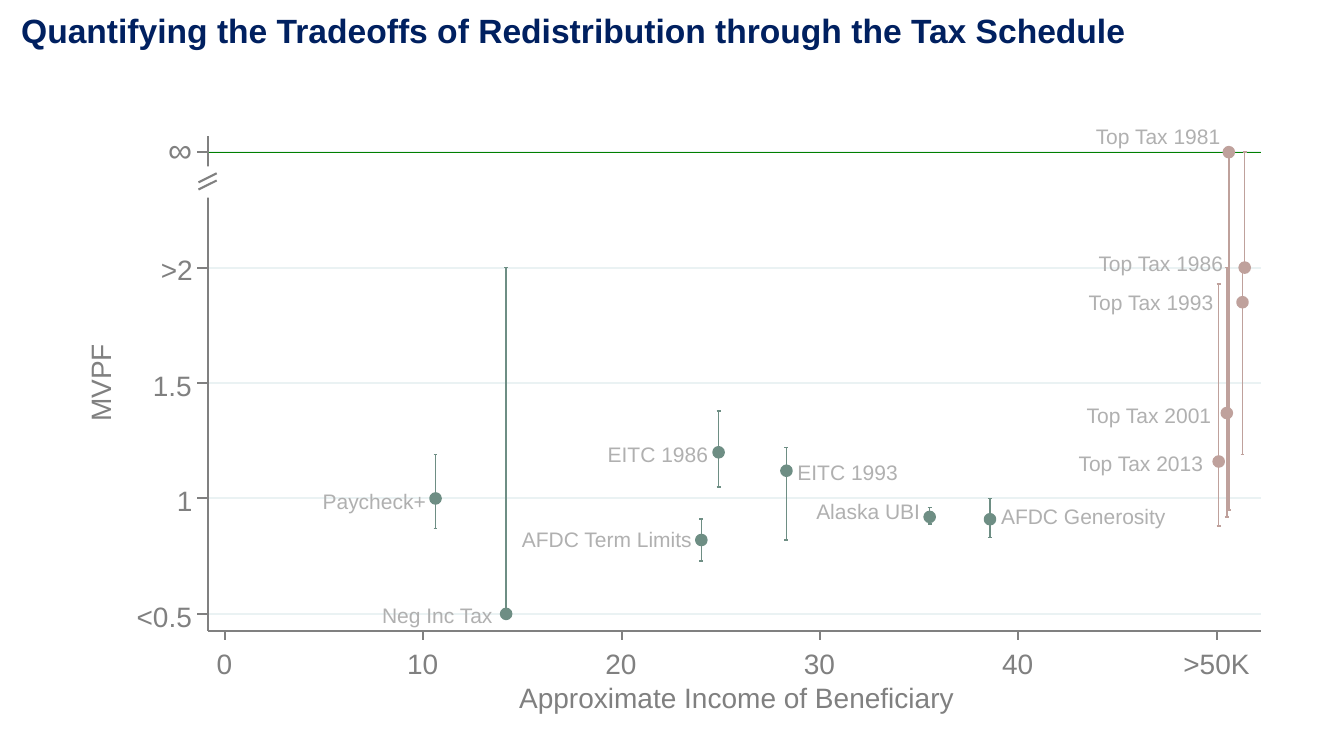
from dataclasses import dataclass
from typing import NamedTuple

from lxml.etree import SubElement
from pptx import Presentation
from pptx.dml.color import RGBColor as RGB
from pptx.enum.shapes import MSO_CONNECTOR as LINK, MSO_SHAPE as SHAPE
from pptx.enum.text import MSO_ANCHOR as ANCHOR, MSO_AUTO_SIZE as FIT, PP_ALIGN as ALIGN
from pptx.oxml.ns import qn
from pptx.util import Pt


@dataclass(frozen=True)
class Theme:
    font: str = "Arial"
    navy: RGB = RGB(0x00, 0x20, 0x60)
    white: RGB = RGB(0xFF, 0xFF, 0xFF)
    grid: RGB = RGB(0xEA, 0xF2, 0xF3)
    infinity: RGB = RGB(0x00, 0x80, 0x00)
    transfer: RGB = RGB(0x6E, 0x8E, 0x84)
    top_tax: RGB = RGB(0xBF, 0xA1, 0x9C)
    axis: RGB = RGB(0x80, 0x80, 0x80)
    policy: RGB = RGB(0xB0, 0xB0, 0xB0)
    title_size: float = 24
    axis_size: float = 20
    policy_size: float = 15


THEME = Theme()


class Box(NamedTuple):
    left: float
    top: float
    width: float
    height: float

    @property
    def right(self):
        return self.left + self.width

    @property
    def bottom(self):
        return self.top + self.height

    def x(self, income):
        return self.left + 12.3 + 14.17 * income

    def y(self, mvpf):
        return self.bottom - 12.2 - 164.9 * (mvpf - 0.5)


class Policy(NamedTuple):
    name: str
    income: float
    mvpf: float
    low: float
    high: float
    label_dx: float
    label_dy: float
    label_width: float
    color: RGB = THEME.transfer


INFINITY = 2.5
TOP_WIDTH = 103
POLICIES = [
    Policy("Paycheck+", 10.62, 1, 0.87, 1.19, -80.6, -6.8, 83.5),
    Policy("Neg Inc Tax", 14.18, 0.5, 0.5, 2, -88.6, -7.9, 91.4),
    Policy("AFDC Term Limits", 24.02, 0.82, 0.73, 0.91, -128.2, -9.7, 137.5),
    Policy("EITC 1986", 24.89, 1.2, 1.05, 1.38, -79.2, -7.6, 81.4),
    Policy("EITC 1993", 28.31, 1.12, 0.82, 1.22, 7.9, -8.3, 81.4),
    Policy("Alaska UBI", 35.53, 0.92, 0.89, 0.96, -81, -13.3, 85),
    Policy("AFDC Generosity", 38.57, 0.91, 0.83, 1, 7.9, -11.2, 130.3),
    Policy("Top Tax 2013", 50.1, 1.16, 0.88, 1.93, -100.1, -7.6, TOP_WIDTH, THEME.top_tax),
    Policy("Top Tax 2001", 50.51, 1.37, 0.92, 2, -100.1, -7.6, TOP_WIDTH, THEME.top_tax),
    Policy("Top Tax 1981", 50.61, INFINITY, 0.95, INFINITY, -95, -20.2, TOP_WIDTH, THEME.top_tax),
    Policy("Top Tax 1993", 51.3, 1.85, 1.19, 2, -109.8, -9, TOP_WIDTH, THEME.top_tax),
    Policy("Top Tax 1986", 51.41, 2, 2, INFINITY, -104.4, -11.9, TOP_WIDTH, THEME.top_tax),
]
MVPF_TICKS = [("<0.5", 49), ("1", 20.2), ("1.5", 37.4), (">2", 31.7), (None, 0)]
INCOME_TICKS = [("0", 20.2), ("10", 31.7), ("20", 31.7), ("30", 31.7), ("40", 31.7), (">50K", 56.2)]


def write(shapes, box, words, *, size=THEME.axis_size, color=THEME.axis,
          bold=False, turn=0, holder=None):
    holder = holder or shapes.add_textbox(0, 0, 0, 0)
    holder.left, holder.top, holder.width, holder.height = map(Pt, box)
    holder.rotation = turn
    frame = holder.text_frame
    frame.margin_left = frame.margin_right = frame.margin_top = frame.margin_bottom = 0
    frame.word_wrap = True
    frame.auto_size = FIT.NONE
    frame.vertical_anchor = ANCHOR.TOP
    paragraph = frame.paragraphs[0]
    paragraph.alignment = ALIGN.LEFT
    run = paragraph.add_run()
    run.text = words
    font = run.font
    font.name, font.size, font.bold = THEME.font, Pt(size), bold
    font.color.rgb = color


def rule(shapes, x1, y1, x2, y2, color=THEME.axis, width=1.5):
    link = shapes.add_connector(LINK.STRAIGHT, Pt(x1), Pt(y1), Pt(x2), Pt(y2))
    link.line.color.rgb = color
    link.line.width = Pt(width)
    SubElement(link._element.spPr, qn("a:effectLst"))


def patch(shapes, kind, box, color, line_width=0):
    shape = shapes.add_shape(kind, *map(Pt, box))
    shape.shadow.inherit = False
    shape.fill.solid()
    shape.fill.fore_color.rgb = color
    if line_width:
        shape.line.color.rgb = color
        shape.line.width = Pt(line_width)
    else:
        shape.line.fill.background()


def draw_grid(shapes, plot):
    patch(shapes, SHAPE.RECTANGLE, plot, THEME.white, 1.13)
    for step in range(len(MVPF_TICKS)):
        level = plot.y(0.5 + step / 2)
        rule(shapes, plot.left, level, plot.right, level, THEME.grid)
    top = plot.y(INFINITY)
    rule(shapes, plot.left, top, plot.right, top, THEME.infinity, 0.75)


def draw_policies(shapes, plot):
    cap, dot = 1.4, 6.5
    for policy in POLICIES:
        x, low, high = plot.x(policy.income), plot.y(policy.low), plot.y(policy.high)
        rule(shapes, x, low, x, high, policy.color, 1.13)
        for end in (high, low):
            rule(shapes, x - cap, end, x + cap, end, policy.color, 1.13)
    for policy in POLICIES:
        x, y = plot.x(policy.income), plot.y(policy.mvpf)
        patch(shapes, SHAPE.OVAL, (x - dot / 2, y - dot / 2, dot, dot), policy.color, 2.5)
        write(shapes, (x + policy.label_dx, y + policy.label_dy, policy.label_width, 21.6),
              policy.name, size=THEME.policy_size, color=THEME.policy)


def draw_mvpf_axis(shapes, plot):
    rule(shapes, plot.left, plot.bottom, plot.left, plot.top)
    for step, (words, width) in enumerate(MVPF_TICKS):
        level = plot.y(0.5 + step / 2)
        rule(shapes, plot.left, level, plot.left - 7.4, level)
        if words:
            write(shapes, (plot.left - 1.7 - width, level - 10.5, width, 28), words)
    write(shapes, (plot.left - 107.3, plot.top + 157.7, 64.8, 28), "MVPF", turn=270)


def draw_income_axis(shapes, plot):
    rule(shapes, plot.left, plot.bottom, plot.right, plot.bottom)
    for step, (words, width) in enumerate(INCOME_TICKS):
        x = plot.x(10 * step)
        rule(shapes, x, plot.bottom, x, plot.bottom + 6.6)
        write(shapes, (x + 4.3 - width / 2, plot.bottom + 10.8, width, 28), words)
    write(shapes, (plot.left + 222.5, plot.bottom + 35.3, 322.6, 28),
          "Approximate Income of Beneficiary")


def draw_axis_break(shapes, plot):
    x, y = plot.left, plot.top
    patch(shapes, SHAPE.RECTANGLE, (x - 22.3, y + 21.6, 41.8, 22.3), THEME.white)
    write(shapes, (x - 28.1, y - 5, 17.3, 28.8), "∞", size=THEME.title_size)
    rule(shapes, x, y + 34.6, x, y + 30.2, THEME.white, 3)
    for drop in (33.1, 38.2):
        rule(shapes, x - 6.5, y + drop, x + 6.5, y + drop - 6.5)


def draw_chart_slide(slide, plot):
    shapes = slide.shapes
    write(shapes, (15.1, 7.2, 836.6, 28.8),
          "Quantifying the Tradeoffs of Redistribution through the Tax Schedule",
          size=THEME.title_size, color=THEME.navy, bold=True, holder=shapes.title)
    draw_grid(shapes, plot)
    draw_policies(shapes, plot)
    draw_mvpf_axis(shapes, plot)
    draw_income_axis(shapes, plot)
    draw_axis_break(shapes.add_group_shape().shapes, plot)


def main():
    deck = Presentation()
    deck.slide_width, deck.slide_height = Pt(960), Pt(540)
    slide = deck.slides.add_slide(deck.slide_layouts[5])
    draw_chart_slide(slide, Box(148.3, 97.2, 752.4, 353.5))
    deck.save("out.pptx")


if __name__ == "__main__":
    main()
